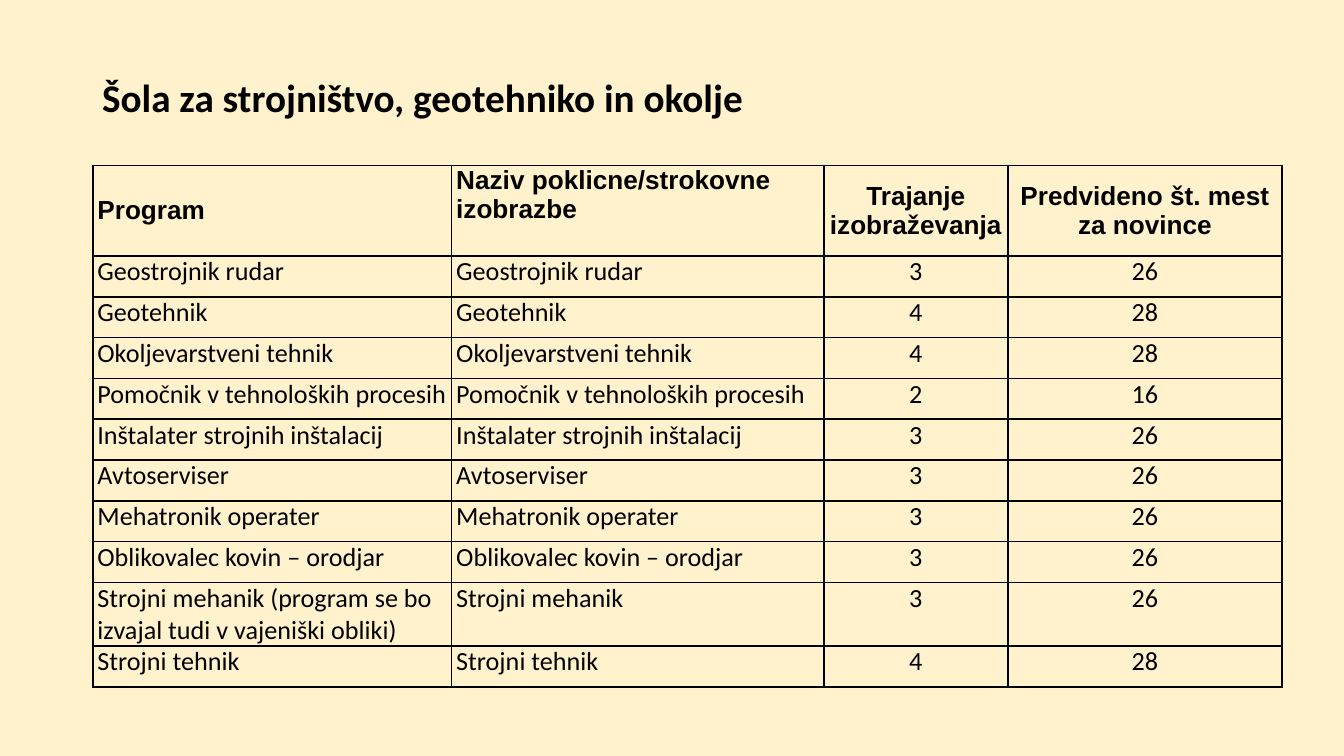
import pptx
import pptx.dml.color
import pptx.enum.text
import pptx.oxml
import pptx.oxml.ns
import pptx.util

COLORS = {"background": "FFF2CC", "ink": "000000"}
HEADINGS = ["Program", "Naziv poklicne/strokovne izobrazbe",
            "Trajanje izobraževanja", "Predvideno št. mest za novince"]
# Programme, qualification, years, places
PROGRAMMES = [
    ("Geostrojnik rudar", "Geostrojnik rudar", 3, 26),
    ("Geotehnik", "Geotehnik", 4, 28),
    ("Okoljevarstveni tehnik", "Okoljevarstveni tehnik", 4, 28),
    ("Pomočnik v tehnoloških procesih", "Pomočnik v tehnoloških procesih", 2, 16),
    ("Inštalater strojnih inštalacij", "Inštalater strojnih inštalacij", 3, 26),
    ("Avtoserviser", "Avtoserviser", 3, 26),
    ("Mehatronik operater", "Mehatronik operater", 3, 26),
    ("Oblikovalec kovin – orodjar", "Oblikovalec kovin – orodjar", 3, 26),
    ("Strojni mehanik (program se bo izvajal tudi v vajeniški obliki)",
     "Strojni mehanik", 3, 26),
    ("Strojni tehnik", "Strojni tehnik", 4, 28),
]
ANCHOR = pptx.enum.text.MSO_ANCHOR
ALIGN = pptx.enum.text.PP_ALIGN


def style_text(paragraph, font_name, size, bold, alignment):
    paragraph.alignment = alignment
    paragraph.font.name = font_name
    paragraph.font.size = pptx.util.Pt(size)
    paragraph.font.bold = bold
    paragraph.font.color.rgb = pptx.dml.color.RGBColor.from_string(COLORS["ink"])


def add_borders(cell):
    properties = cell._tc.get_or_add_tcPr()
    for position, side in enumerate(("lnL", "lnR", "lnT", "lnB")):
        properties.insert(position, pptx.oxml.parse_xml(
            f'<a:{side} {pptx.oxml.ns.nsdecls("a")} w="{pptx.util.Pt(1)}">'
            f'<a:solidFill><a:srgbClr val="{COLORS["ink"]}"/></a:solidFill></a:{side}>'))


# Widescreen slide, 16:9
deck = pptx.Presentation()
deck.slide_width = pptx.util.Inches(10)
deck.slide_height = deck.slide_width * 9 // 16
width, height = deck.slide_width, deck.slide_height
left = int(width * 0.069)

slide = deck.slides.add_slide(deck.slide_layouts[5])
slide.background.fill.solid()
slide.background.fill.fore_color.rgb = pptx.dml.color.RGBColor.from_string(
    COLORS["background"])

# Title
school = slide.shapes.title
school.left, school.top = left, pptx.util.Inches(0.2)
school.width, school.height = width - 2 * left, pptx.util.Inches(1.09)
school_text = school.text_frame
school_text.text = "Šola za strojništvo, geotehniko in okolje"
school_text.auto_size = pptx.enum.text.MSO_AUTO_SIZE.NONE
school_text.vertical_anchor = ANCHOR.MIDDLE
school_text.margin_left = school_text.margin_right = pptx.util.Inches(0.07)
school_text.margin_top = school_text.margin_bottom = pptx.util.Inches(0.04)
school_text.paragraphs[0].line_spacing = 0.9
style_text(school_text.paragraphs[0], "Calibri", 21, True, ALIGN.LEFT)

# Table grid, as shares of the slide: tall heading, one two-line row
column_widths = [int(width * share) for share in (0.267, 0.277, 0.137, 0.204)]
row_heights = [int(height * share) for share in [0.12] + [0.054] * 8 + [0.084, 0.054]]
enrolment = slide.shapes.add_table(
    len(row_heights), len(column_widths), left, pptx.util.Inches(1.23),
    sum(column_widths), sum(row_heights)).table
enrolment.horz_banding = False
for column, column_width in zip(enrolment.columns, column_widths):
    column.width = column_width
for row, row_height in zip(enrolment.rows, row_heights):
    row.height = row_height

# Table contents
for row_index, entries in enumerate([HEADINGS, *PROGRAMMES]):
    is_heading = row_index == 0
    for column_index, entry in enumerate(entries):
        cell = enrolment.cell(row_index, column_index)
        cell.text = str(entry)
        cell.fill.background()
        cell.margin_left = cell.margin_right = pptx.util.Pt(2.5)
        cell.margin_top = cell.margin_bottom = 0
        centred_vertically = is_heading and column_index != 1
        cell.vertical_anchor = ANCHOR.MIDDLE if centred_vertically else ANCHOR.TOP
        style_text(cell.text_frame.paragraphs[0],
                   "Arial" if is_heading else "Calibri", 14, is_heading,
                   ALIGN.LEFT if column_index < 2 else ALIGN.CENTER)
        add_borders(cell)

deck.save("out.pptx")
